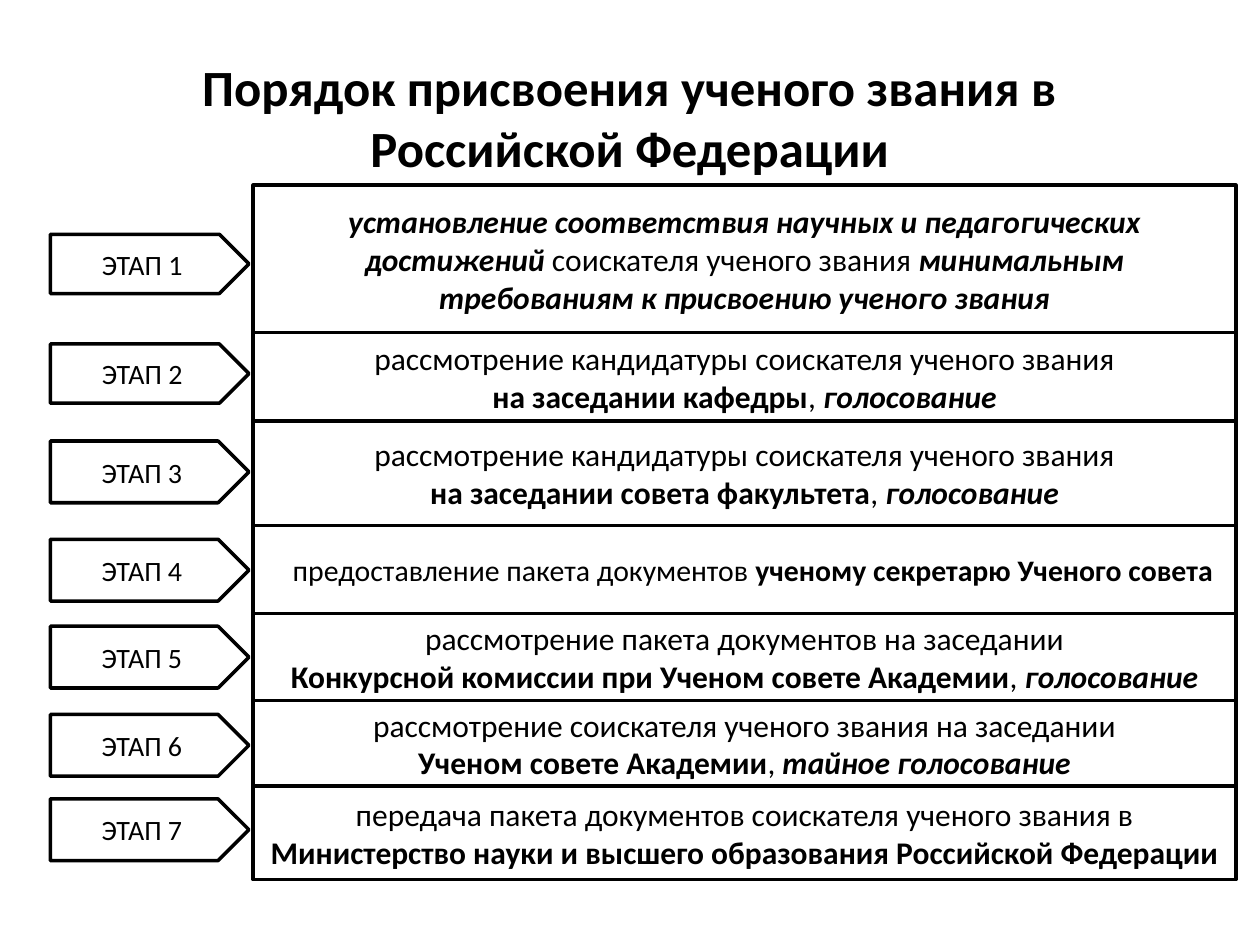
from dataclasses import dataclass

from pptx import Presentation
from pptx.dml.color import RGBColor
from pptx.enum.shapes import MSO_SHAPE
from pptx.enum.text import MSO_ANCHOR, PP_ALIGN
from pptx.util import Pt

RECTANGLE = MSO_SHAPE.RECTANGLE
PENTAGON = MSO_SHAPE.PENTAGON
MIDDLE = MSO_ANCHOR.MIDDLE
CENTER = PP_ALIGN.CENTER
LEFT = PP_ALIGN.LEFT


@dataclass(frozen=True)
class Theme:
    """Colours, font and type sizes of the deck."""
    ink: RGBColor = RGBColor(0, 0, 0)
    paper: RGBColor = RGBColor(255, 255, 255)
    font: str = "Calibri"
    title: float = 29
    body: float = 18
    compact: float = 17
    label: float = 16
    line: float = 2


@dataclass(frozen=True)
class Stage:
    """One stage: its box top and height, arrow top and height, and text."""
    top: float
    height: float
    arrow_top: float
    arrow_height: float
    paragraphs: list
    size: float = Theme.body
    align: PP_ALIGN = CENTER
    indent: float = 0


THEME = Theme()
PLAIN, BOLD, BOLD_ITALIC = (False, False), (True, False), (True, True)
TITLE = "Порядок присвоения ученого звания в Российской Федерации"


def vote(opening, body, ballot="голосование"):
    """Return the two paragraphs of a stage that ends with a vote."""
    return [[(opening, PLAIN)],
            [(body, BOLD), (", ", PLAIN), (ballot, BOLD_ITALIC)]]


CANDIDATE = "рассмотрение кандидатуры соискателя ученого звания"
STAGES = [
    Stage(105.84, 84.24, 133.92, 33.84, [[
        ("установление соответствия научных и педагогических достижений ", BOLD_ITALIC),
        ("соискателя ученого звания ", PLAIN),
        ("минимальным требованиям к присвоению ученого звания", BOLD_ITALIC)]]),
    Stage(190.08, 50.4, 196.56, 33.84, vote(CANDIDATE, "на заседании кафедры")),
    Stage(240.48, 59.76, 252, 35.28, vote(CANDIDATE, "на заседании совета факультета")),
    Stage(300.24, 50.4, 308.16, 35.28, [[
        ("предоставление пакета документов ", PLAIN),
        ("ученому секретарю Ученого совета", BOLD)]],
        size=THEME.compact, align=LEFT, indent=15.4),
    Stage(350.64, 49.68, 357.84, 35.28, vote(
        "рассмотрение пакета документов на заседании",
        "Конкурсной комиссии при Ученом совете Академии")),
    Stage(400.32, 48.96, 408.24, 35.28, vote(
        "рассмотрение соискателя ученого звания на заседании",
        "Ученом совете Академии", "тайное голосование")),
    Stage(449.28, 53.28, 456.48, 35.28, [[
        ("передача пакета документов соискателя ученого звания в ", PLAIN),
        ("Министерство науки и высшего образования Российской Федерации", BOLD)]]),
]


def write(frame, paragraphs, size, align=CENTER):
    """Fill a text frame with paragraphs of styled runs."""
    frame.word_wrap = True
    frame.vertical_anchor = MIDDLE
    for index, spans in enumerate(paragraphs):
        para = frame.add_paragraph() if index else frame.paragraphs[0]
        para.alignment = align
        for text, (bold, italic) in spans:
            span = para.add_run()
            span.text = text
            span.font.name = THEME.font
            span.font.size = Pt(size)
            span.font.bold = bold
            span.font.italic = italic
            span.font.color.rgb = THEME.ink


def add_outlined(page, kind, left, top, width, height):
    """Add a white shape with a black outline."""
    shape = page.shapes.add_shape(kind, Pt(left), Pt(top), Pt(width), Pt(height))
    shape.shadow.inherit = False
    shape.fill.solid()
    shape.fill.fore_color.rgb = THEME.paper
    shape.line.color.rgb = THEME.ink
    shape.line.width = Pt(THEME.line)
    return shape


def place_title(page, left, top, width, height):
    """Move and fill the title placeholder."""
    title = page.shapes.title
    title.left, title.top = Pt(left), Pt(top)
    title.width, title.height = Pt(width), Pt(height)
    write(title.text_frame, [[(TITLE, BOLD)]], THEME.title)


def place_arrows(page, left, width):
    """Add the column of numbered stage arrows."""
    for number, stage in enumerate(STAGES, 1):
        arrow = add_outlined(page, PENTAGON, left, stage.arrow_top,
                             width, stage.arrow_height)
        write(arrow.text_frame, [[(f"ЭТАП {number}", PLAIN)]], THEME.label)


def place_boxes(page, left, width):
    """Add the stack of stage descriptions."""
    for stage in STAGES:
        box = add_outlined(page, RECTANGLE, left, stage.top, width, stage.height)
        box.text_frame.margin_left = Pt(7.2 + stage.indent)
        write(box.text_frame, stage.paragraphs, stage.size, stage.align)


def main():
    """Build and save the deck."""
    deck = Presentation()
    deck.slide_width, deck.slide_height = Pt(720), Pt(540)
    page = deck.slides.add_slide(deck.slide_layouts.get_by_name("Title Only"))
    place_title(page, 36, 21.6, 648, 90)
    place_boxes(page, 144.72, 561.6)
    place_arrows(page, 28.8, 113.5)
    deck.save("out.pptx")


if __name__ == "__main__":
    main()
